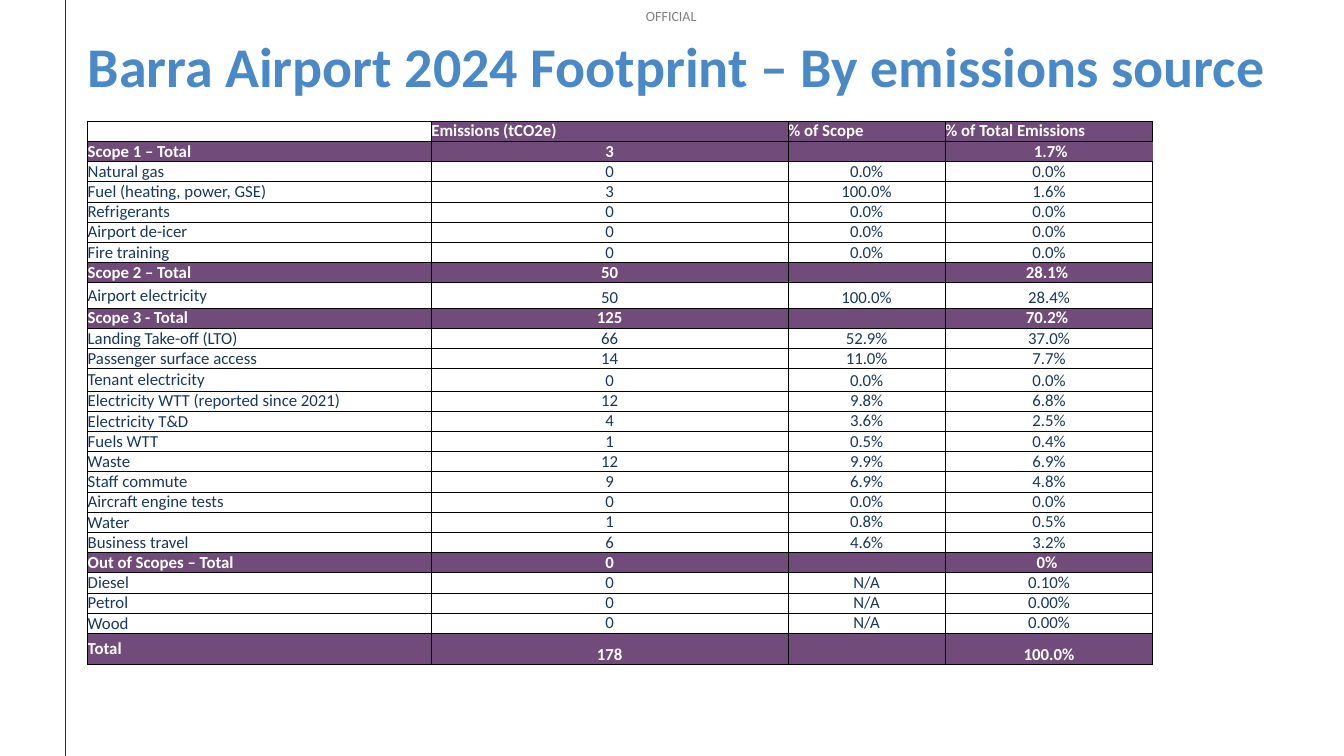
import pptx
import pptx.dml.color
import pptx.enum.shapes
import pptx.enum.text
import pptx.oxml
import pptx.oxml.ns
import pptx.util

Cm = pptx.util.Cm
Pt = pptx.util.Pt
ANCHOR = pptx.enum.text.MSO_ANCHOR
ALIGN = pptx.enum.text.PP_ALIGN
NAMESPACE = pptx.oxml.ns.nsdecls("a")

COLUMN_WIDTHS = (8.66, 8.99, 3.96, 5.23)
ROW_HEIGHT = 0.48
SPECIAL_HEIGHTS = {"": 0.46, "Airport electricity": 0.64, "Tenant electricity": 0.56, "Total": 0.79}
EMISSIONS = [
    ("", "Emissions (tCO2e)", "% of Scope", "% of Total Emissions"),
    ("Scope 1 – Total", "3", "", " 1.7%"),
    ("Natural gas", "0", "0.0%", "0.0%"),
    ("Fuel (heating, power, GSE)", "3", "100.0%", "1.6%"),
    ("Refrigerants", "0", "0.0%", "0.0%"),
    ("Airport de-icer", "0", "0.0%", "0.0%"),
    ("Fire training", "0", "0.0%", "0.0%"),
    ("Scope 2 – Total", "50", "", "28.1% "),
    ("Airport electricity", "50", "100.0%", "28.4%"),
    ("Scope 3 - Total", "125", "", "70.2% "),
    ("Landing Take-off (LTO)", "66", "52.9%", "37.0%"),
    ("Passenger surface access", "14", "11.0%", "7.7%"),
    ("Tenant electricity", "0", "0.0%", "0.0%"),
    ("Electricity WTT (reported since 2021)", "12", "9.8%", "6.8%"),
    ("Electricity T&D", "4", "3.6%", "2.5%"),
    ("Fuels WTT", "1", "0.5%", "0.4%"),
    ("Waste", "12", "9.9%", "6.9%"),
    ("Staff commute", "9", "6.9%", "4.8%"),
    ("Aircraft engine tests", "0", "0.0%", "0.0%"),
    ("Water", "1", "0.8%", "0.5%"),
    ("Business travel", "6", "4.6%", "3.2%"),
    ("Out of Scopes – Total", "0", "", "0% "),
    ("Diesel", "0", "N/A", "0.10%"),
    ("Petrol", "0", "N/A", "0.00%"),
    ("Wood", "0", "N/A", "0.00%"),
    ("Total", "178", "", "100.0%"),
]


def color(value):
    return pptx.dml.color.RGBColor.from_string(value)


def write(frame, text, size=12, fill="000000", bold=False, align=ALIGN.LEFT, spacing=None, opacity=None):
    """Put one formatted paragraph in a text frame; an empty one keeps its font size."""
    para = frame.paragraphs[0]
    para.alignment = align
    if spacing:
        para.line_spacing = spacing
    if not text:
        para._p.append(pptx.oxml.parse_xml(f'<a:endParaRPr {NAMESPACE} sz="{size * 100}"/>'))
        return
    span = para.add_run()
    span.text = text
    span.font.name = "Calibri"
    span.font.size = Pt(size)
    span.font.bold = bold
    span.font.color.rgb = color(fill)
    if opacity:
        rgb = span.font.fill._xPr.find(".//" + pptx.oxml.ns.qn("a:srgbClr"))
        rgb.append(pptx.oxml.parse_xml(f'<a:alpha {NAMESPACE} val="{opacity * 1000}"/>'))


class EmissionsPage:
    title_color = "4989C8"
    band_color = "714B79"
    body_color = "17385F"
    rule_color = "023671"

    def __init__(self, deck):
        self.page = deck.slides.add_slide(deck.slide_layouts[6])

    def rule(self, left, bottom):
        line = self.page.shapes.add_connector(
            pptx.enum.shapes.MSO_CONNECTOR.STRAIGHT, Cm(left), 0, Cm(left), bottom)
        line.line.color.rgb = color(self.rule_color)
        line.line.width = Pt(1)
        line._element.spPr.append(pptx.oxml.parse_xml(f"<a:effectLst {NAMESPACE}/>"))

    def text(self, left, top, width, height, text, wrap=True, **style):
        box = self.page.shapes.add_textbox(Cm(left), Cm(top), Cm(width), Cm(height))
        frame = box.text_frame
        frame.word_wrap = wrap
        frame.margin_left = frame.margin_right = frame.margin_top = frame.margin_bottom = 0
        write(frame, text, **style)

    def borders(self, cell, open_sides=""):
        properties = cell._tc.get_or_add_tcPr()
        for side in "LRTB":
            paint = "<a:noFill/>" if side in open_sides else (
                '<a:solidFill><a:srgbClr val="000000"/></a:solidFill>')
            properties.append(pptx.oxml.parse_xml(
                f'<a:ln{side} {NAMESPACE} w="{Pt(0.5)}">{paint}</a:ln{side}>'))

    def cell(self, cell, text, banded, align, anchor, open_sides):
        cell.margin_left = cell.margin_right = cell.margin_top = cell.margin_bottom = 0
        cell.vertical_anchor = anchor
        self.borders(cell, open_sides)
        if banded:
            cell.fill.solid()
            cell.fill.fore_color.rgb = color(self.band_color)
        else:
            cell.fill.background()
        write(cell.text_frame, text, bold=banded, align=align,
              fill="FFFFFF" if banded else self.body_color)

    def table(self, left, top, rows):
        heights = [SPECIAL_HEIGHTS.get(row[0], ROW_HEIGHT) for row in rows]
        table = self.page.shapes.add_table(
            len(rows), len(COLUMN_WIDTHS), Cm(left), Cm(top),
            Cm(sum(COLUMN_WIDTHS)), Cm(sum(heights))).table
        table.first_row = table.horz_banding = False
        for column, width in zip(table.columns, COLUMN_WIDTHS):
            column.width = Cm(width)
        for i, (row, height) in enumerate(zip(rows, heights)):
            table.rows[i].height = Cm(height)
            for j, text in enumerate(row):
                heading = i == 0 or j == 0
                banded = row[0].endswith("Total") or (i == 0 and j > 0)
                self.cell(table.cell(i, j), text, banded,
                          ALIGN.LEFT if heading else ALIGN.CENTER,
                          ANCHOR.MIDDLE if heading else ANCHOR.BOTTOM,
                          "R" if (i, j) == (1, 3) else "")


def main():
    deck = pptx.Presentation()
    deck.slide_width, deck.slide_height = Cm(33.87), Cm(19.05)
    page = EmissionsPage(deck)
    page.rule(1.65, deck.slide_height)
    page.text(16.28, 0.18, 1.35, 0.43, "OFFICIAL", wrap=False, size=10, opacity=50)
    page.text(2.21, 0.99, 30.43, 2.69, "Barra Airport 2024 Footprint – By emissions source",
              size=40, fill=page.title_color, bold=True, spacing=0.9)
    page.table(2.21, 3.05, EMISSIONS)
    deck.save("out.pptx")


if __name__ == "__main__":
    main()
